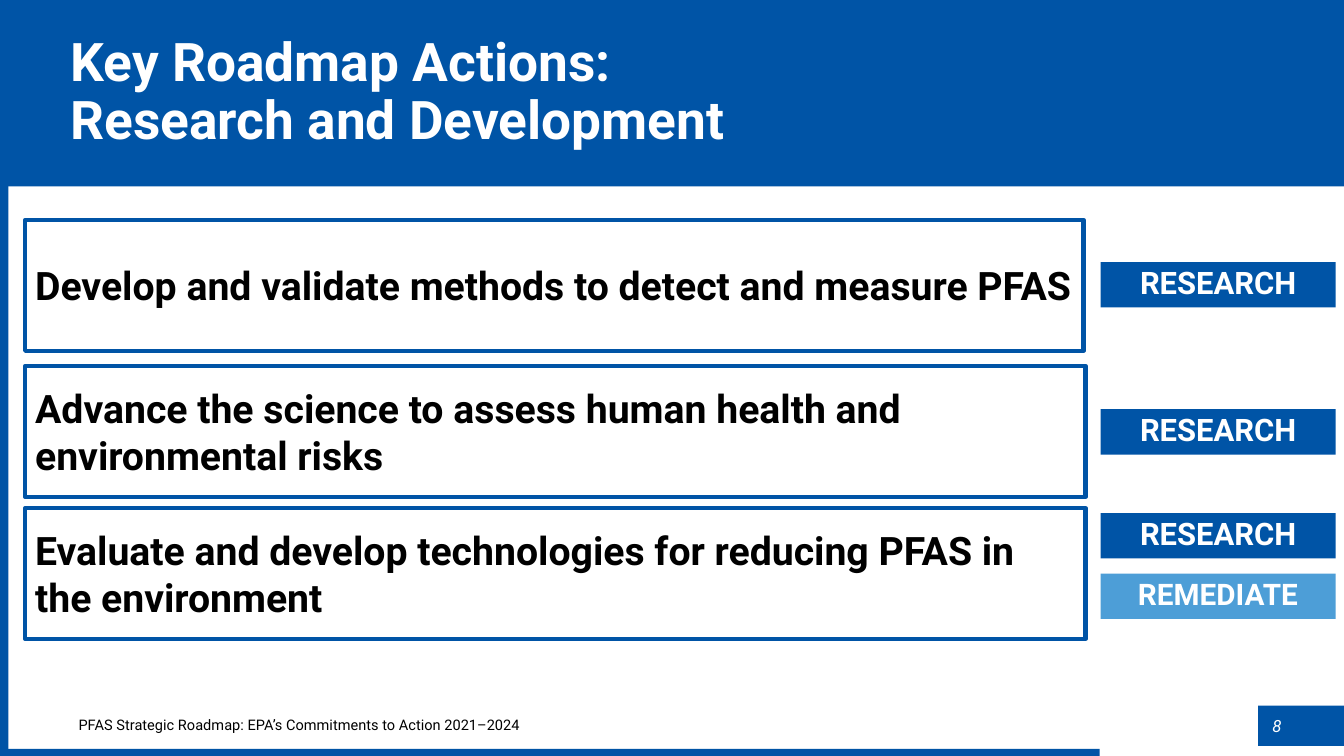
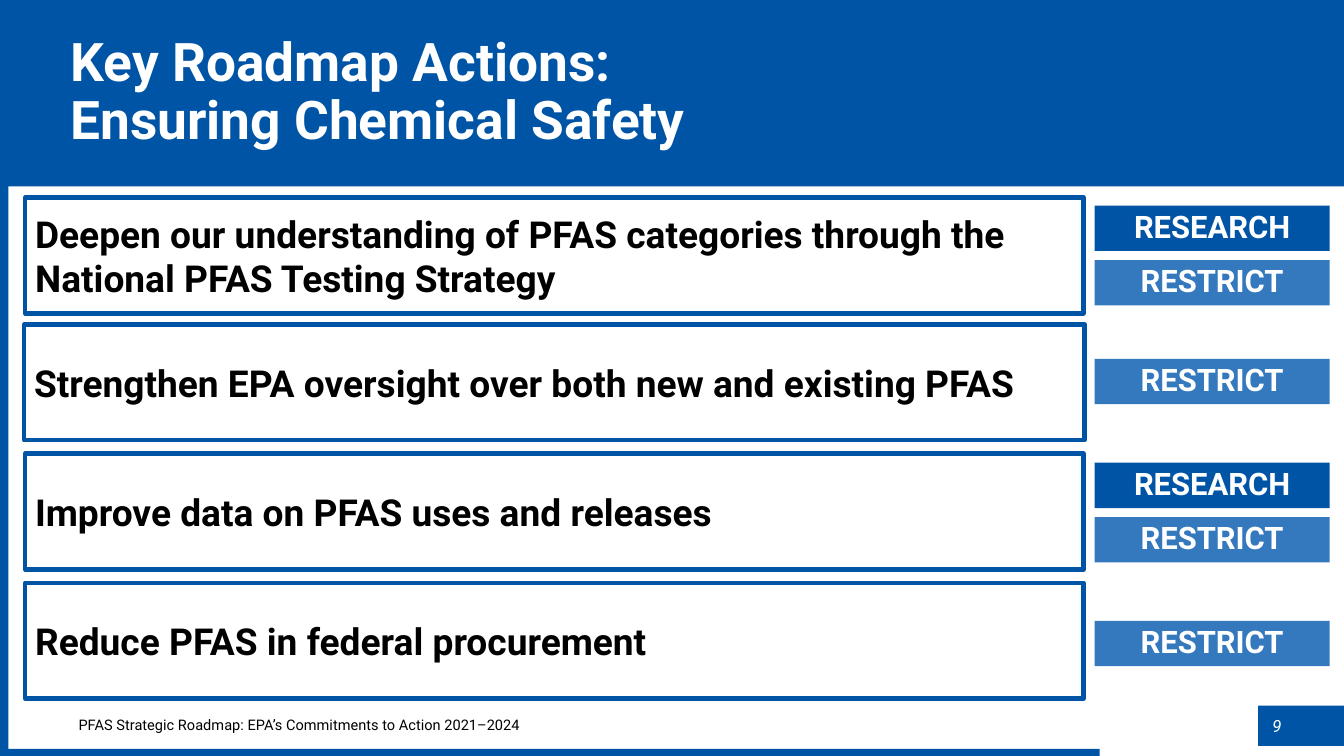
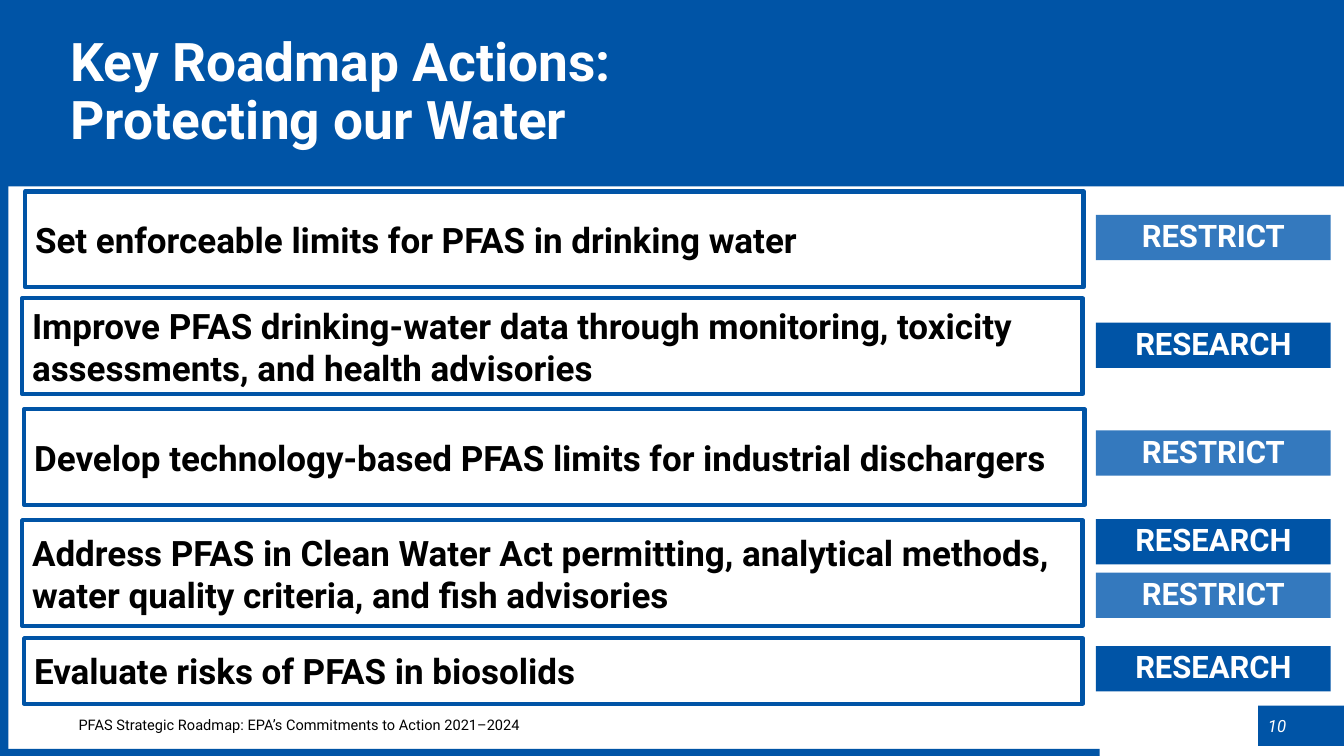
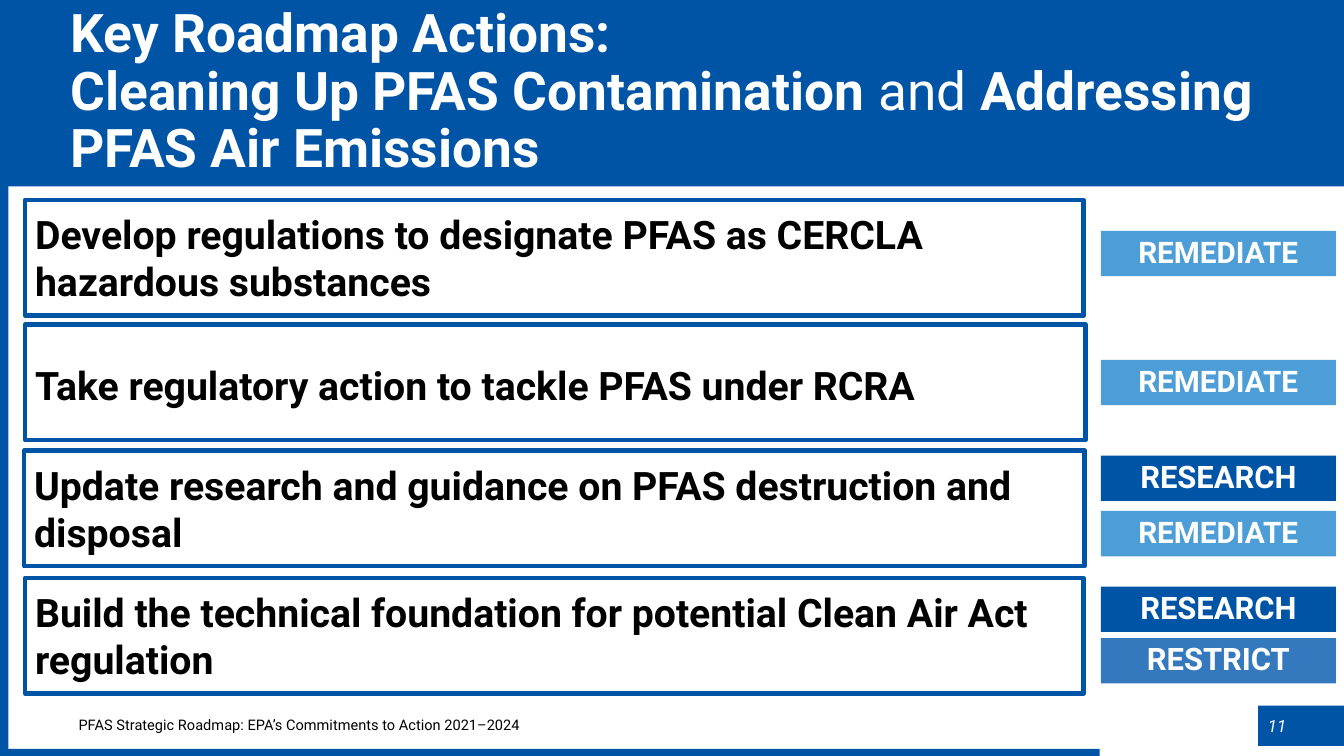
from lxml import etree
from pptx import Presentation
from pptx.dml.color import RGBColor
from pptx.enum.shapes import MSO_SHAPE
from pptx.enum.text import MSO_ANCHOR, MSO_AUTO_SIZE, PP_ALIGN
from pptx.oxml.ns import qn
from pptx.util import Pt

RECT = MSO_SHAPE.RECTANGLE
MIDDLE = MSO_ANCHOR.MIDDLE
FIXED = MSO_AUTO_SIZE.NONE
LEFT, CENTER = PP_ALIGN.LEFT, PP_ALIGN.CENTER

FONT = "Roboto"
COLORS = {
    "blue": "0054A6",
    "white": "FFFFFF",
    "black": "000000",
    "RESEARCH": "0054A6",
    "RESTRICT": "3479BE",
    "REMEDIATE": "4D9ED7",
}
TAG_SIZES = {"RESEARCH": 22.1, "RESTRICT": 22.1, "REMEDIATE": 21.2}
FOOTER = "PFAS Strategic Roadmap: EPA’s Commitments to Action 2021–2024"
FIRST = 8  # number on the first slide

# Each row: left, top, width, height, text, tags as (top, label)
SLIDES = [
    {
        "title": "Research and Development",
        "size": 28,
        "tag_x": 786.2,
        "rows": [
            (18, 157, 756, 93.6, "Develop and validate methods to detect and measure PFAS",
             [(187.2, "RESEARCH")]),
            (18, 261.4, 757.4, 93.6,
             "Advance the science to assess human health and environmental risks",
             [(292.3, "RESEARCH")]),
            (18, 362.9, 757.4, 93.6,
             "Evaluate and develop technologies for reducing PFAS in the environment",
             [(366.5, "RESEARCH"), (409.7, "REMEDIATE")]),
        ],
    },
    {
        "title": "Ensuring Chemical Safety",
        "size": 26.5,
        "tag_x": 781.9,
        "rows": [
            (18, 141.1, 756, 82.8,
             "Deepen our understanding of PFAS categories through the "
             "National PFAS Testing Strategy",
             [(146.9, "RESEARCH"), (185.8, "RESTRICT")]),
            (17.3, 231.8, 757.4, 82.8,
             "Strengthen EPA oversight over both new and existing PFAS",
             [(256.3, "RESTRICT")]),
            (18, 324, 756, 82.8, "Improve data on PFAS uses and releases",
             [(330.5, "RESEARCH"), (369.4, "RESTRICT")]),
            (18, 416.2, 756, 82.8, "Reduce PFAS in federal procurement",
             [(443.5, "RESTRICT")]),
        ],
    },
    {
        "title": "Protecting our Water",
        "size": 25,
        "tag_x": 782.8,
        "rows": [
            (18, 136.8, 756, 68.4, "Set enforceable limits for PFAS in drinking water",
             [(153.4, "RESTRICT")]),
            (15.8, 213.1, 757.4, 68.4,
             "Improve PFAS drinking-water data through monitoring, toxicity "
             "assessments, and health advisories",
             [(230.4, "RESEARCH")]),
            (17.3, 292.3, 757.4, 68.4,
             "Develop technology-based PFAS limits for industrial dischargers",
             [(307.4, "RESTRICT")]),
            (15.8, 371.5, 757.4, 75.6,
             "Address PFAS in Clean Water Act permitting, analytical methods, "
             "water quality criteria, and fish advisories",
             [(370.8, "RESEARCH"), (409, "RESTRICT")]),
            (17.3, 455.8, 756, 46.8, "Evaluate risks of PFAS in biosolids",
             [(461.5, "RESEARCH")]),
        ],
    },
    {
        "title": "Cleaning Up PFAS Contamination |and| Addressing PFAS Air Emissions",
        "size": 28,
        "tag_x": 786.4,
        "rows": [
            (18, 142.6, 756, 82.8,
             "Develop regulations to designate PFAS as CERCLA hazardous substances",
             [(164.9, "REMEDIATE")]),
            (18, 231.8, 757.4, 82.8, "Take regulatory action to tackle PFAS under RCRA",
             [(257, "REMEDIATE")]),
            (17.3, 321.8, 757.4, 82.8,
             "Update research and guidance on PFAS destruction and disposal",
             [(325.4, "RESEARCH"), (365, "REMEDIATE")]),
            (18, 412.6, 756, 82.8,
             "Build the technical foundation for potential Clean Air Act regulation",
             [(419, "RESEARCH"), (455.8, "RESTRICT")]),
        ],
    },
]


def write(shape, text, size, color="white", bold=True, italic=False, align=LEFT,
          space=None, inset=(7.2, 3.6, 7.2, 3.6), lift=None):
    """Fill a shape with text; \\n breaks the line, |...| is set without bold."""
    frame = shape.text_frame
    frame.word_wrap = True
    frame.auto_size = FIXED
    frame.vertical_anchor = MIDDLE
    frame.margin_left, frame.margin_top, frame.margin_right, frame.margin_bottom = map(Pt, inset)
    para = frame.paragraphs[0]
    para.alignment = align
    if space:
        para.line_spacing = space
    for row, line in enumerate(text.split("\n")):
        if row:
            para.add_line_break()
            etree.SubElement(para._p[-1], qn("a:rPr"), sz=str(round(size * 100)))
        for part, words in enumerate(line.split("|")):
            run = para.add_run()
            run.text = words
            font = run.font
            font.name, font.size = FONT, Pt(size)
            font.bold, font.italic = bold and part % 2 == 0, italic
            font.color.rgb = RGBColor.from_string(COLORS[color])
            if lift:
                run._r.get_or_add_rPr().set("baseline", str(lift * 1000))


def block(page, x, y, w, h, fill, line=None):
    """Add a flat rectangle."""
    shape = page.shapes.add_shape(RECT, Pt(x), Pt(y), Pt(w), Pt(h))
    shape.shadow.inherit = False
    shape.fill.solid()
    shape.fill.fore_color.rgb = RGBColor.from_string(COLORS[fill])
    if line:
        shape.line.color.rgb = RGBColor.from_string(COLORS[line])
        shape.line.width = Pt(3)
    else:
        shape.line.fill.background()
    return shape


deck = Presentation()
deck.slide_width, deck.slide_height = Pt(960), Pt(540)
layout = deck.slide_layouts[5]

for num, data in enumerate(SLIDES, FIRST):
    page = deck.slides.add_slide(layout)

    # Title band
    title = page.shapes.title
    title.left, title.top, title.width, title.height = Pt(0), Pt(0), Pt(960), Pt(133.2)
    title.fill.solid()
    title.fill.fore_color.rgb = RGBColor.from_string(COLORS["blue"])
    write(title, "Key Roadmap Actions: \n" + data["title"], 38, space=0.9,
          inset=(50.4, 3.6, 50.4, 3.6))

    # Footer and slide number
    foot = page.shapes.add_textbox(Pt(49), Pt(500.4), Pt(725.8), Pt(28.8))
    write(foot, FOOTER, 18, color="black", bold=False, lift=30,
          inset=(7.2, 14.4, 7.2, 3.6))
    mark = page.shapes.add_textbox(Pt(901.4), Pt(507.6), Pt(21.6), Pt(21.6))
    write(mark, str(num), 12, bold=False, italic=True, align=CENTER, inset=(0, 0, 0, 0))

    # Actions with their tags
    for x, y, w, h, text, tags in data["rows"]:
        box = block(page, x, y, w, h, "white", line="blue")
        space = 1.1 if text.startswith("Take") else None
        write(box, text, data["size"], color="black", space=space)
        for top, label in tags:
            tag = block(page, data["tag_x"], top, 167.8, 32.4, label)
            write(tag, label, TAG_SIZES[label], align=CENTER, space=0.9)

# Number patch, bottom bar and left bar, moved to the shared layout
for spot in [(898.6, 504, 61.4, 28.8), (0, 535, 785.5, 5), (0, 2, 6, 538)]:
    bar = block(page, *spot, "blue")
    layout.shapes._spTree.append(bar._element)

deck.save("out.pptx")
